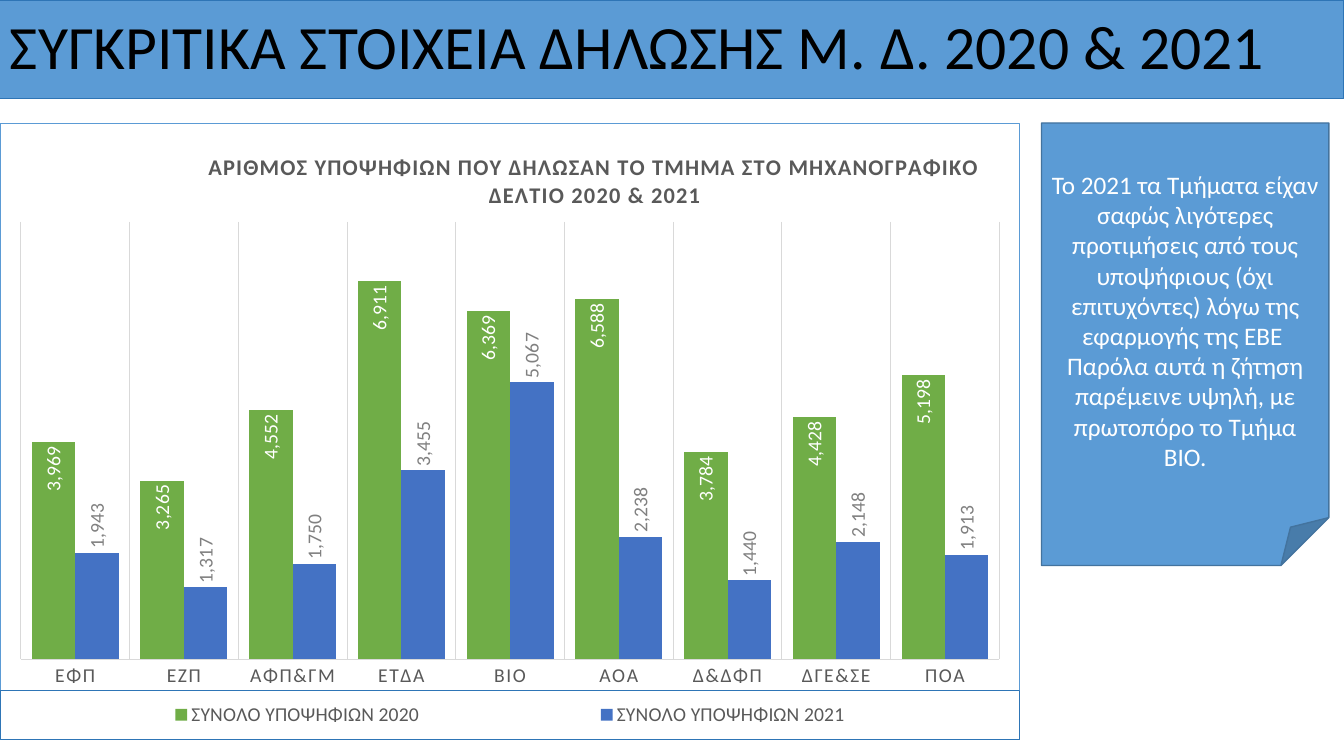
from dataclasses import dataclass

import pptx
import pptx.chart.data
import pptx.dml.color
import pptx.enum.chart
import pptx.enum.shapes
import pptx.enum.text
import pptx.oxml
import pptx.oxml.ns
import pptx.util

RGBColor = pptx.dml.color.RGBColor
Inches = pptx.util.Inches
Pt = pptx.util.Pt
Shape = pptx.enum.shapes.MSO_SHAPE
Align = pptx.enum.text.PP_ALIGN
LabelPosition = pptx.enum.chart.XL_LABEL_POSITION

BLUE = RGBColor(0x5B, 0x9B, 0xD5)
TITLE_EDGE = RGBColor(0x2E, 0x75, 0xB6)
NOTE_EDGE = RGBColor(0x43, 0x73, 0x9E)
GREEN = RGBColor(0x70, 0xAD, 0x47)
ROYAL = RGBColor(0x44, 0x72, 0xC4)
BLACK = RGBColor(0, 0, 0)
WHITE = RGBColor(0xFF, 0xFF, 0xFF)
DARK_GRAY = RGBColor(0x59, 0x59, 0x59)
GRAY = RGBColor(0x80, 0x80, 0x80)
LIGHT_GRAY = RGBColor(0xD9, 0xD9, 0xD9)
FONT = "Calibri"
DEPARTMENTS = ["ΕΦΠ", "ΕΖΠ", "ΑΦΠ&ΓΜ", "ΕΤΔΑ", "ΒΙΟ", "ΑΟΑ", "Δ&ΔΦΠ", "ΔΓΕ&ΣΕ", "ΠΟΑ"]
CHART_TITLE = "ΑΡΙΘΜΟΣ ΥΠΟΨΗΦΙΩΝ ΠΟΥ ΔΗΛΩΣΑΝ ΤΟ ΤΜΗΜΑ ΣΤΟ ΜΗΧΑΝΟΓΡΑΦΙΚΟ ΔΕΛΤΙΟ 2020 & 2021"


@dataclass(frozen=True)
class Panel:
    shape: Shape
    frame: tuple[float, float, float, float]
    edge: RGBColor
    edge_width: float
    paragraphs: list[str]
    size: int
    color: RGBColor
    align: Align
    line_spacing: float


@dataclass(frozen=True)
class YearSeries:
    name: str
    values: list[int]
    color: RGBColor
    label_position: LabelPosition
    label_color: RGBColor


PANELS = [
    Panel(Shape.RECTANGLE, (0, 0, 13.33, 0.98), TITLE_EDGE, 0.75,
          ["ΣΥΓΚΡΙΤΙΚΑ ΣΤΟΙΧΕΙΑ ΔΗΛΩΣΗΣ Μ. Δ. 2020 & 2021"],
          44, BLACK, Align.LEFT, 0.9),
    Panel(Shape.FOLDED_CORNER, (10.33, 1.22, 2.85, 4.39), NOTE_EDGE, 1,
          ["Το 2021 τα Τμήματα είχαν σαφώς λιγότερες προτιμήσεις από τους "
           "υποψήφιους (όχι επιτυχόντες) λόγω της εφαρμογής της ΕΒΕ ",
           "Παρόλα αυτά η ζήτηση παρέμεινε υψηλή, με πρωτοπόρο το Τμήμα ΒΙΟ."],
          18, WHITE, Align.CENTER, 1.0),
]
YEARS = [
    YearSeries("ΣΥΝΟΛΟ ΥΠΟΨΗΦΙΩΝ 2020",
               [3969, 3265, 4552, 6911, 6369, 6588, 3784, 4428, 5198],
               GREEN, LabelPosition.INSIDE_END, WHITE),
    YearSeries("ΣΥΝΟΛΟ ΥΠΟΨΗΦΙΩΝ 2021",
               [1943, 1317, 1750, 3455, 5067, 2238, 1440, 2148, 1913],
               ROYAL, LabelPosition.OUTSIDE_END, GRAY),
]


def style_font(font, size: float, color: RGBColor, bold: bool = False) -> None:
    font.name, font.size, font.bold = FONT, Pt(size), bold
    font.color.rgb = color


def add_panel(page, panel: Panel) -> None:
    box = page.shapes.add_shape(panel.shape, *map(Inches, panel.frame))
    box.shadow.inherit = False
    box.fill.solid()
    box.fill.fore_color.rgb = BLUE
    box.line.color.rgb = panel.edge
    box.line.width = Pt(panel.edge_width)
    frame = box.text_frame
    frame.word_wrap = True
    frame.vertical_anchor = pptx.enum.text.MSO_ANCHOR.MIDDLE
    for index, text in enumerate(panel.paragraphs):
        para = frame.add_paragraph() if index else frame.paragraphs[0]
        para.alignment = panel.align
        para.line_spacing = panel.line_spacing
        span = para.add_run()
        span.text = text
        style_font(span.font, panel.size, panel.color)


def border_xml(color: RGBColor):
    return pptx.oxml.parse_xml(
        f'<c:spPr {pptx.oxml.ns.nsdecls("c", "a")}>'
        f'<a:solidFill><a:srgbClr val="{WHITE}"/></a:solidFill>'
        f'<a:ln w="9525"><a:solidFill><a:srgbClr val="{color}"/></a:solidFill></a:ln></c:spPr>')


def layout_xml(inner: bool = False, **place: float):
    """Manual layout in fractions of the chart frame."""
    target = '<c:layoutTarget val="inner"/>' if inner else ""
    modes = "".join(f'<c:{side}Mode val="edge"/>' for side in "xy")
    sizes = "".join(f'<c:{key} val="{value}"/>' for key, value in place.items())
    return pptx.oxml.parse_xml(
        f'<c:layout {pptx.oxml.ns.nsdecls("c")}><c:manualLayout>'
        f'{target}{modes}{sizes}</c:manualLayout></c:layout>')


def set_layout(element, layout, after: str = "") -> None:
    for old in element.findall(pptx.oxml.ns.qn("c:layout")):
        element.remove(old)
    if after:
        element.find(pptx.oxml.ns.qn(after)).addnext(layout)
    else:
        element.insert(0, layout)


def add_chart_title(chart) -> None:
    chart.has_title = True
    para = chart.chart_title.text_frame.paragraphs[0]
    span = para.add_run()
    span.text = CHART_TITLE
    style_font(span.font, 16, DARK_GRAY, bold=True)
    span.font._element.set("spc", "100")
    set_layout(chart.chart_title._element, layout_xml(x=0.2, y=0.04), "c:tx")


def style_axes(chart) -> None:
    departments, counts = chart.category_axis, chart.value_axis
    departments.major_tick_mark = pptx.enum.chart.XL_TICK_MARK.NONE
    departments.has_major_gridlines = True
    for line in (departments.format.line, departments.major_gridlines.format.line):
        line.color.rgb = LIGHT_GRAY
        line.width = Pt(0.75)
    style_font(departments.tick_labels.font, 14, DARK_GRAY)
    departments.tick_labels.font._element.set("spc", "100")
    counts.minimum_scale, counts.maximum_scale = 0, 8000
    counts.has_major_gridlines = False
    counts.visible = False


def style_series(series, year: YearSeries) -> None:
    series.format.fill.solid()
    series.format.fill.fore_color.rgb = year.color
    labels = series.data_labels
    labels.show_value = True
    labels.number_format, labels.number_format_is_linked = "#,##0", False
    labels.position = year.label_position
    style_font(labels.font, 14, year.label_color)
    body = labels._element.find(".//" + pptx.oxml.ns.qn("a:bodyPr"))
    body.set("rot", "-5400000")
    body.set("vert", "horz")


def add_legend(chart) -> None:
    chart.has_legend = True
    legend = chart.legend
    legend.position = pptx.enum.chart.XL_LEGEND_POSITION.BOTTOM
    legend.include_in_layout = False
    style_font(legend.font, 14, DARK_GRAY)
    set_layout(legend._element, layout_xml(x=0, y=0.92, w=1, h=0.08), "c:legendPos")
    legend._element.find(pptx.oxml.ns.qn("c:txPr")).addprevious(border_xml(TITLE_EDGE))


def add_preferences_chart(page) -> None:
    data = pptx.chart.data.CategoryChartData(number_format="#,##0")
    data.categories = DEPARTMENTS
    for year in YEARS:
        data.add_series(year.name, year.values)
    chart = page.shapes.add_chart(
        pptx.enum.chart.XL_CHART_TYPE.COLUMN_CLUSTERED,
        *map(Inches, (0, 1.22, 10.12, 6.12)), data).chart
    style_font(chart.font, 14, BLACK)
    add_chart_title(chart)
    style_axes(chart)
    plot = chart.plots[0]
    plot.gap_width, plot.overlap, plot.vary_by_categories = 50, 0, False
    for series, year in zip(plot.series, YEARS):
        style_series(series, year)
    add_legend(chart)
    space = chart._chartSpace
    set_layout(space.chart.plotArea, layout_xml(inner=True, x=0.02, y=0.16, w=0.96, h=0.71))
    space.chart.addnext(border_xml(BLUE))


def main() -> None:
    deck = pptx.Presentation()
    deck.slide_width, deck.slide_height = Inches(13.33), Inches(7.5)
    page = deck.slides.add_slide(deck.slide_layouts[6])
    title, note = PANELS
    add_panel(page, title)
    add_preferences_chart(page)
    add_panel(page, note)
    deck.save("out.pptx")


if __name__ == "__main__":
    main()
